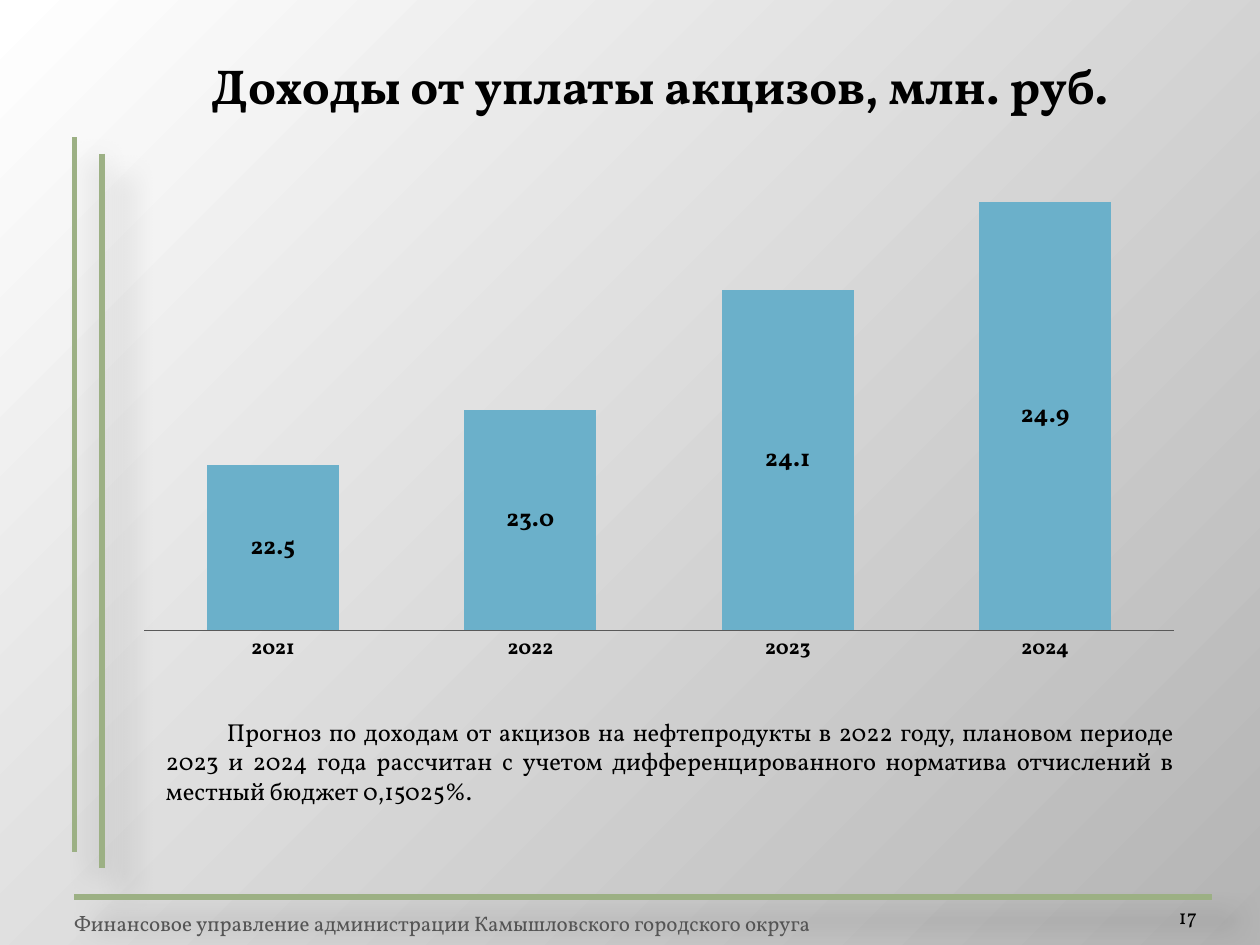
from lxml import etree
from pptx import Presentation
from pptx.chart.data import CategoryChartData
from pptx.dml.color import RGBColor
from pptx.enum.chart import XL_CHART_TYPE, XL_LABEL_POSITION, XL_TICK_MARK
from pptx.enum.shapes import MSO_CONNECTOR
from pptx.enum.text import MSO_ANCHOR, PP_ALIGN
from pptx.oxml import parse_xml
from pptx.oxml.ns import qn
from pptx.util import Pt

STACKED = XL_CHART_TYPE.COLUMN_STACKED
CENTER_LABEL = XL_LABEL_POSITION.CENTER
NO_TICK = XL_TICK_MARK.NONE
STRAIGHT = MSO_CONNECTOR.STRAIGHT
TOP, BOTTOM = MSO_ANCHOR.TOP, MSO_ANCHOR.BOTTOM
LEFT, RIGHT = PP_ALIGN.LEFT, PP_ALIGN.RIGHT
CENTER, JUSTIFY = PP_ALIGN.CENTER, PP_ALIGN.JUSTIFY

FACE = "Vollkorn"
COLORS = {
    "light": "FFFFFF",
    "dark": "B4B4B4",
    "rule": "9CB084",
    "text": "000000",
    "footer": "595959",
    "bar": "6BB0CA",
    "axis": "595959",
}
NS = 'xmlns:a="http://schemas.openxmlformats.org/drawingml/2006/main"'
NS_C = 'xmlns:c="http://schemas.openxmlformats.org/drawingml/2006/chart"'


def color(name):
    """Return a named colour."""
    return RGBColor.from_string(COLORS[name])


def style(font, size, name="text", bold=False):
    """Set face, size, colour and weight of a font."""
    font.name, font.size, font.bold = FACE, Pt(size), bold
    font.color.rgb = color(name)


def paint_back(slide):
    """Fill the background with a gradient spreading from the top left."""
    fill = slide.background.fill
    fill.gradient()
    for stop, name, place in zip(fill.gradient_stops, ("light", "dark"), (0, 1)):
        stop.color.rgb, stop.position = color(name), place
    line = next(slide.element.iter(qn("a:lin")))
    path = parse_xml(
        f'<a:path {NS} path="circle"><a:fillToRect r="100000" b="100000"/></a:path>'
    )
    line.getparent().replace(line, path)


def add_rule(slide, x1, y1, x2, y2):
    """Add a green line with a soft shadow."""
    rule = slide.shapes.add_connector(STRAIGHT, Pt(x1), Pt(y1), Pt(x2), Pt(y2))
    rule.line.color.rgb = color("rule")
    rule.line.width = Pt(3)
    rule.element.spPr.append(parse_xml(
        f'<a:effectLst {NS}><a:outerShdw blurRad="{Pt(15)}" dist="{Pt(18)}" '
        'dir="2700000" algn="tl" rotWithShape="0"><a:srgbClr val="000000">'
        '<a:alpha val="26000"/></a:srgbClr></a:outerShdw></a:effectLst>'
    ))


def add_text(slide, box, text, size, align=LEFT, name="text", bold=False,
             anchor=TOP, inset=7.2, indent=0):
    """Add a wrapped one-paragraph text box."""
    frame = slide.shapes.add_textbox(*map(Pt, box)).text_frame
    frame.word_wrap = True
    frame.vertical_anchor = anchor
    frame.margin_left = frame.margin_right = Pt(inset)
    para = frame.paragraphs[0]
    para.text, para.alignment = text, align
    if indent:
        para._p.get_or_add_pPr().set("indent", str(Pt(indent)))
    style(para.runs[0].font, size, name, bold)


def place_plot(chart, x, y, w, h):
    """Fix the inner plot area as shares of the chart."""
    plot = chart._chartSpace.chart.plotArea
    for old in plot.findall(qn("c:layout")):
        plot.remove(old)
    layout = parse_xml(f"<c:layout {NS_C}><c:manualLayout/></c:layout>")
    parts = {"layoutTarget": "inner", "xMode": "edge", "yMode": "edge",
             "x": x, "y": y, "w": w, "h": h}
    for tag, val in parts.items():
        etree.SubElement(layout[0], qn(f"c:{tag}")).set("val", str(val))
    plot.insert(0, layout)


def add_bars(slide, box, cats, vals):
    """Add the column chart of yearly income."""
    data = CategoryChartData(number_format="#,##0.0")
    data.categories = cats
    data.add_series("Series 1", vals)
    chart = slide.shapes.add_chart(STACKED, *map(Pt, box), data).chart
    chart.has_legend = chart.has_title = False
    style(chart.font, 10)
    place_plot(chart, 0, 0.02, 0.953, 0.89)

    years, scale = chart.category_axis, chart.value_axis
    years.major_tick_mark = NO_TICK
    years.format.line.color.rgb = color("axis")
    years.format.line.width = Pt(0.75)
    style(years.tick_labels.font, 12, bold=True)
    scale.visible = scale.has_major_gridlines = False
    scale.minimum_scale, scale.maximum_scale = 21, 25.5

    plot = chart.plots[0]
    plot.gap_width, plot.overlap = 95, 100
    plot.vary_by_categories = False
    bars = plot.series[0]
    bars.format.fill.solid()
    bars.format.fill.fore_color.rgb = color("bar")
    labels = bars.data_labels
    labels.show_value = True
    labels.position = CENTER_LABEL
    labels.number_format, labels.number_format_is_linked = "#,##0.0", False
    style(labels.font, 14, bold=True)


def main():
    """Build and save the slide."""
    deck = Presentation()
    deck.slide_width, deck.slide_height = Pt(720), Pt(540)
    slide = deck.slides.add_slide(deck.slide_layouts[6])
    paint_back(slide)
    add_rule(slide, 42.5, 78.5, 42.5, 486.7)
    add_rule(slide, 58.3, 87.8, 58.3, 496)
    add_text(slide, (35.3, 517, 657.4, 21.6),
             "Финансовое управление администрации Камышловского городского округа",
             12, name="footer")
    add_rule(slide, 42.5, 512.6, 692.6, 512.6)
    add_text(slide, (624.2, 505.4, 59.8, 28.8), "17", 12, RIGHT,
             anchor=BOTTOM, inset=0)
    add_text(slide, (87.8, 406.1, 590.4, 79.9),
             "Прогноз по доходам от акцизов на нефтепродукты в 2022 году, "
             "плановом периоде 2023 и 2024 года рассчитан с учетом "
             "дифференцированного норматива отчислений в местный бюджет 0,15025%.",
             14, JUSTIFY, indent=34.8)
    add_text(slide, (84.2, 28.1, 585.4, 41), "Доходы от уплаты акцизов, млн. руб.",
             28, CENTER, bold=True)
    add_bars(slide, (82.1, 71.3, 617.8, 317.5),
             ("2021", "2022", "2023", "2024"), (22.5, 23, 24.1, 24.9))
    deck.save("out.pptx")


if __name__ == "__main__":
    main()
